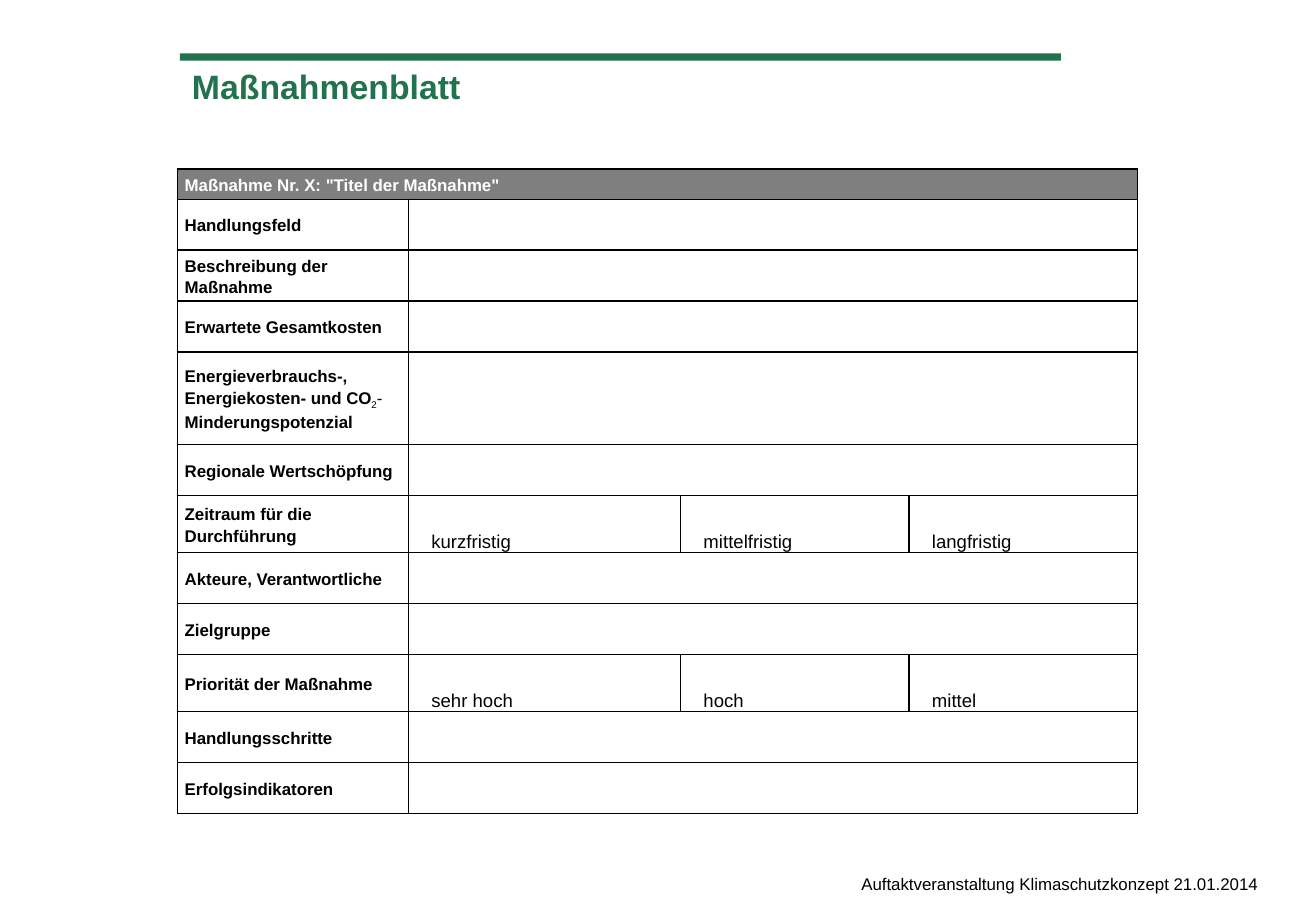
import pptx
import pptx.dml.color
import pptx.enum.shapes
import pptx.enum.text
import pptx.oxml
import pptx.oxml.ns
import pptx.util

Inches = pptx.util.Inches
Pt = pptx.util.Pt
ANCHOR = pptx.enum.text.MSO_ANCHOR

COLORS = {"green": "22724D", "gray": "7F7F7F", "white": "FFFFFF", "black": "000000"}
LABEL = {"size": Pt(10), "bold": True}
OPTION = {"size": Pt(11), "bold": False}
TITLE = {"size": Pt(20), "bold": True}
FOOTER = {"size": Pt(10), "bold": False}

HEADING = 'Maßnahme Nr. X: "Titel der Maßnahme"'
COLUMN_WIDTHS = [1.9, 2.24, 1.88, 1.88]
HEADING_HEIGHT = 0.25
ROWS = [
    ("Handlungsfeld", 0.42, []),
    ("Beschreibung der Maßnahme", 0.42, []),
    ("Erwartete Gesamtkosten", 0.42, []),
    ("Energieverbrauchs-, Energiekosten- und CO", 0.76, []),
    ("Regionale Wertschöpfung", 0.42, []),
    ("Zeitraum für die Durchführung", 0.47, ["kurzfristig", "mittelfristig", "langfristig"]),
    ("Akteure, Verantwortliche", 0.42, []),
    ("Zielgruppe", 0.42, []),
    ("Priorität der Maßnahme", 0.47, ["sehr hoch", "hoch", "mittel"]),
    ("Handlungsschritte", 0.42, []),
    ("Erfolgsindikatoren", 0.42, []),
]
SAVINGS_ROW = 4


def apply_format(target, values):
    for name, value in values.items():
        setattr(target, name, value)


def add_span(para, text, style, color="black"):
    span = para.add_run()
    span.text = text
    apply_format(span.font, {"name": "Arial", **style})
    span.font.color.rgb = pptx.dml.color.RGBColor.from_string(COLORS[color])
    return span


def fill_solid(target, color):
    target.fill.solid()
    target.fill.fore_color.rgb = pptx.dml.color.RGBColor.from_string(COLORS[color])


def add_bar(page):
    bar = page.shapes.add_shape(
        pptx.enum.shapes.MSO_SHAPE.RECTANGLE,
        Inches(1.48), Inches(0.44), Inches(7.25), Inches(0.06),
    )
    bar.shadow.inherit = False
    fill_solid(bar, "green")
    bar.line.fill.background()


def add_title(page, text):
    box = page.shapes.title
    apply_format(box, {"left": Inches(1.48), "top": Inches(0.49),
                       "width": Inches(7.16), "height": Inches(0.93)})
    apply_format(box.text_frame, {"vertical_anchor": ANCHOR.TOP, "word_wrap": True})
    para = box.text_frame.paragraphs[0]
    para.alignment = pptx.enum.text.PP_ALIGN.LEFT
    add_span(para, text, TITLE, "green")


def add_footer(page, text):
    box = page.shapes.add_textbox(Inches(6.99), Inches(7.14), Inches(3.84), Inches(0.31))
    box.text_frame.word_wrap = True
    add_span(box.text_frame.paragraphs[0], text, FOOTER)


def add_borders(cell):
    properties = cell._tc.get_or_add_tcPr()
    namespace = pptx.oxml.ns.nsdecls("a")
    for position, side in enumerate(("lnL", "lnR", "lnT", "lnB")):
        properties.insert(position, pptx.oxml.parse_xml(
            f'<a:{side} {namespace} w="{Pt(1)}"><a:solidFill>'
            f'<a:srgbClr val="{COLORS["black"]}"/></a:solidFill></a:{side}>'
        ))


def write_cell(cell, text, style, color="black"):
    para = cell.text_frame.paragraphs[0]
    para.line_spacing = 1.15
    add_span(para, text, style, color)
    return para


def write_option(cell, text):
    apply_format(cell, {"vertical_anchor": ANCHOR.BOTTOM, "margin_left": Inches(0.19)})
    write_cell(cell, text, OPTION)


def add_measure_table(page):
    heights = [HEADING_HEIGHT] + [height for _, height, _ in ROWS]
    table = page.shapes.add_table(
        len(heights), len(COLUMN_WIDTHS), Inches(1.46), Inches(1.39),
        Inches(sum(COLUMN_WIDTHS)), Inches(sum(heights)),
    ).table
    apply_format(table, {"first_row": False, "horz_banding": False})
    for column, width in zip(table.columns, COLUMN_WIDTHS):
        column.width = Inches(width)
    for row, height in zip(table.rows, heights):
        row.height = Inches(height)
    for cell in table.iter_cells():
        apply_format(cell, {"margin_left": Inches(0.06), "margin_right": Inches(0.06),
                            "margin_top": 0, "margin_bottom": 0,
                            "vertical_anchor": ANCHOR.MIDDLE})
        cell.fill.background()
        add_borders(cell)

    heading = table.cell(0, 0)
    heading.merge(table.cell(0, 3))
    fill_solid(heading, "gray")
    write_cell(heading, HEADING, LABEL, "white")

    for index, (label, _, options) in enumerate(ROWS, start=1):
        para = write_cell(table.cell(index, 0), label, LABEL)
        if index == SAVINGS_ROW:
            plain = {**LABEL, "bold": False}
            subscript = add_span(para, "2", plain)
            subscript.font._element.set("baseline", "-25000")
            add_span(para, "-", plain)
            add_span(para, "Minderungspotenzial", LABEL)
        if not options:
            table.cell(index, 1).merge(table.cell(index, 3))
        for column, option in enumerate(options, start=1):
            write_option(table.cell(index, column), option)


def main():
    deck = pptx.Presentation()
    apply_format(deck, {"slide_width": Inches(10.83), "slide_height": Inches(7.5)})
    page = deck.slides.add_slide(deck.slide_layouts[5])
    add_bar(page)
    add_footer(page, "Auftaktveranstaltung Klimaschutzkonzept 21.01.2014")
    add_title(page, "Maßnahmenblatt")
    add_measure_table(page)
    deck.save("out.pptx")


if __name__ == "__main__":
    main()
